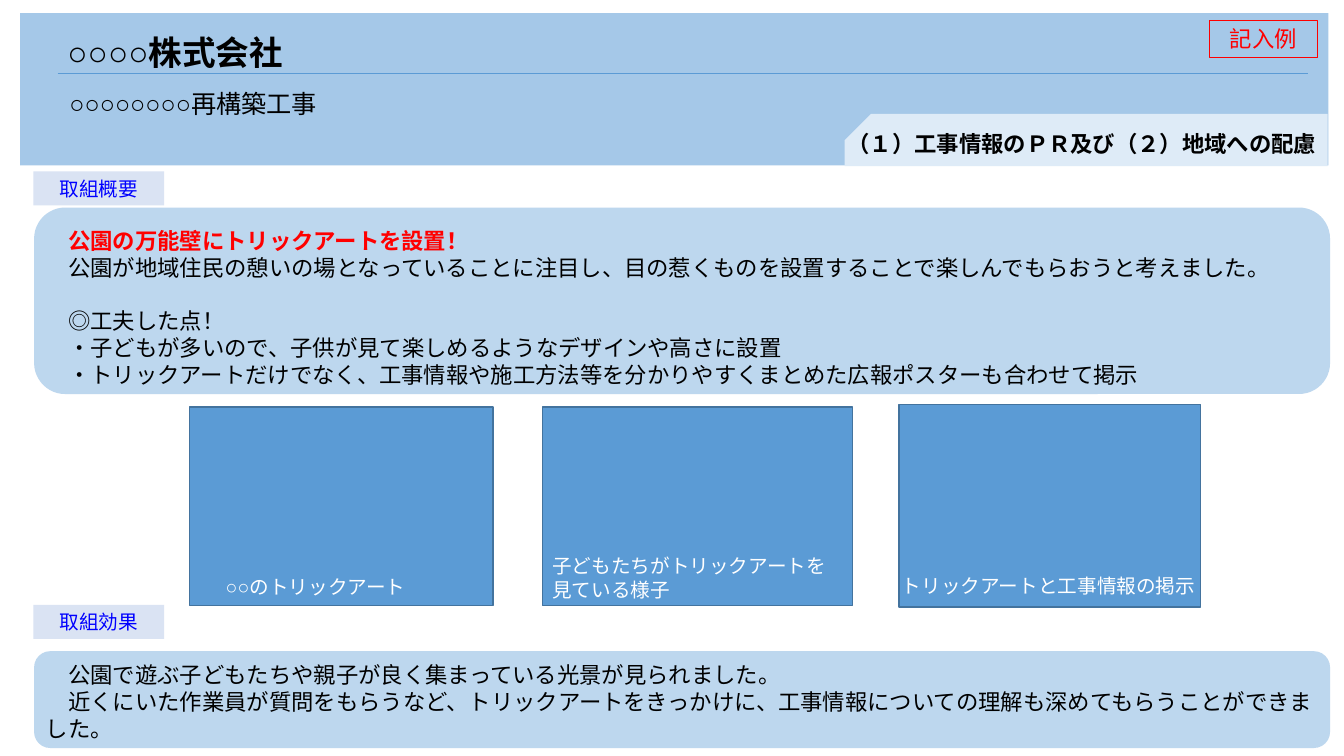
from dataclasses import dataclass
from typing import Optional

from lxml.etree import SubElement
from pptx import Presentation
from pptx.dml.color import RGBColor
from pptx.enum.shapes import MSO_CONNECTOR, MSO_SHAPE as SHAPE
from pptx.enum.text import MSO_ANCHOR, PP_ALIGN
from pptx.oxml.ns import qn
from pptx.util import Cm, Pt

BLACK = RGBColor(0x00, 0x00, 0x00)
WHITE = RGBColor(0xFF, 0xFF, 0xFF)
RED = RGBColor(0xFF, 0x00, 0x00)
LABEL_BLUE = RGBColor(0x00, 0x00, 0xFF)
HEADER = RGBColor(0x69, 0xA4, 0xD9)
TAB = RGBColor(0xDE, 0xEB, 0xF7)
LABEL = RGBColor(0xDA, 0xE3, 0xF3)
PANEL = RGBColor(0xBD, 0xD7, 0xEE)
PHOTO = RGBColor(0x5B, 0x9B, 0xD5)
PHOTO_EDGE = RGBColor(0x43, 0x73, 0x9E)


@dataclass
class Box:
    """Position and size in centimetres."""
    left: float
    top: float
    width: float
    height: float

    def lengths(self) -> tuple:
        return Cm(self.left), Cm(self.top), Cm(self.width), Cm(self.height)


@dataclass
class Style:
    size: float
    color: RGBColor = BLACK
    bold: bool = False
    font: str = "Arial"
    line_spacing: Optional[float] = None
    align: Optional[PP_ALIGN] = None


@dataclass
class Photo:
    frame: Box
    caption: str
    caption_box: Box


def style_run(r, style: Style) -> None:
    f = r.font
    f.name, f.size, f.bold = style.font, Pt(style.size), style.bold
    f.color.rgb = style.color
    SubElement(r._r.get_or_add_rPr(), qn("a:ea")).set("typeface", style.font)


def write(tf, text: str, style: Style) -> None:
    tf.word_wrap = True
    tf.text = text
    for p in tf.paragraphs:
        p.alignment = style.align
        p.line_spacing = style.line_spacing
        for r in p.runs:
            style_run(r, style)


def add_text(slide, box: Box, text: str, style: Style):
    tf = slide.shapes.add_textbox(*box.lengths()).text_frame
    write(tf, text, style)
    return tf


def add_block(slide, kind: SHAPE, box: Box, fill: Optional[RGBColor] = None,
              edge: Optional[RGBColor] = None, edge_width: float = 1):
    sp = slide.shapes.add_shape(kind, *box.lengths())
    sp.shadow.inherit = False
    if fill is None:
        sp.fill.background()
    else:
        sp.fill.solid()
        sp.fill.fore_color.rgb = fill
    if edge is None:
        sp.line.fill.background()
    else:
        sp.line.color.rgb = edge
        sp.line.width = Pt(edge_width)
    return sp


def add_label(sp, text: str, style: Style) -> None:
    write(sp.text_frame, text, style)
    sp.text_frame.vertical_anchor = MSO_ANCHOR.MIDDLE


def add_header(slide) -> None:
    band = add_block(slide, SHAPE.RECTANGLE, Box(0.51, 0.33, 32.97, 3.84), HEADER)
    color = band.fill._xPr.find(qn("a:solidFill"))[0]
    SubElement(color, qn("a:alpha")).set("val", "60000")

    tab = add_block(slide, SHAPE.SNIP_1_RECTANGLE, Box(21.29, 2.87, 12.17, 1.32), TAB)
    tab.adjustments[0] = 0.5
    tab._element.spPr.find(qn("a:xfrm")).set("flipH", "1")

    rule = slide.shapes.add_connector(
        MSO_CONNECTOR.STRAIGHT, Cm(1.45), Cm(1.85), Cm(32.97), Cm(1.85))
    rule.line.color.rgb = PHOTO
    rule.line.width = Pt(0.5)
    SubElement(rule._element.spPr, qn("a:effectLst"))

    add_text(slide, Box(1.45, 0.18, 24.03, 1.8), "○○○○株式会社",
             Style(24, bold=True, line_spacing=1.5))
    add_text(slide, Box(1.5, 1.73, 24.03, 1.42), "○○○○○○○○再構築工事",
             Style(18, line_spacing=1.5))
    add_text(slide, Box(21.11, 3.15, 14.12, 0.94),
             "（１）工事情報のＰＲ及び（２）地域への配慮", Style(16, bold=True))

    stamp = add_block(slide, SHAPE.RECTANGLE, Box(30.48, 0.51, 2.72, 0.94),
                      edge=RED, edge_width=0.75)
    add_label(stamp, "記入例", Style(16, RED, font="Calibri", align=PP_ALIGN.CENTER))


def add_section(slide, label: str, label_top: float, panel: Box,
                text_box: Box, text: str):
    tag = add_block(slide, SHAPE.RECTANGLE, Box(0.84, label_top, 3.3, 0.86), LABEL)
    add_label(tag, label, Style(14, LABEL_BLUE, align=PP_ALIGN.CENTER))
    add_block(slide, SHAPE.ROUNDED_RECTANGLE, panel, PANEL)
    return add_text(slide, text_box, text, Style(16))


OVERVIEW = "\n".join([
    "　公園の万能壁にトリックアートを設置！",
    "　公園が地域住民の憩いの場となっていることに注目し、目の惹くものを設置することで楽しんでもらおうと考えました。",
    "　◎工夫した点！",
    "　・子どもが多いので、子供が見て楽しめるようなデザインや高さに設置",
    "　・トリックアートだけでなく、工事情報や施工方法等を分かりやすくまとめた広報ポスターも合わせて掲示",
])
EFFECT = "\n".join([
    "　公園で遊ぶ子どもたちや親子が良く集まっている光景が見られました。",
    "　近くにいた作業員が質問をもらうなど、トリックアートをきっかけに、工事情報についての理解も深めてもらうことができました。",
])
PHOTOS = [
    Photo(Box(4.78, 10.26, 7.65, 5), "○○のトリックアート", Box(5.44, 14.35, 6.1, 0.86)),
    Photo(Box(13.67, 10.26, 7.82, 5), "子どもたちがトリックアートを見ている様子",
          Box(13.67, 13.84, 7.45, 1.45)),
    Photo(Box(22.66, 10.19, 7.6, 5.11), "トリックアートと工事情報の掲示",
          Box(22.48, 14.33, 8.43, 0.86)),
]


def main() -> None:
    prs = Presentation()
    prs.slide_width, prs.slide_height = Cm(33.87), Cm(19.05)
    slide = prs.slides.add_slide(prs.slide_layouts[6])

    add_header(slide)

    # Overview: red headline, and a gap of one line before the key points
    tf = add_section(slide, "取組概要", 4.32, Box(0.86, 5.23, 32.66, 4.7),
                     Box(0.91, 5.59, 32.66, 4.37), OVERVIEW)
    headline = tf.paragraphs[0].runs[0].font
    headline.bold, headline.color.rgb = True, RED
    tf.paragraphs[2].space_before = Pt(19)

    # Effect
    add_section(slide, "取組効果", 15.24, Box(0.86, 16.41, 32.66, 2.44),
                Box(0.91, 16.54, 32.59, 2.31), EFFECT)

    # Photo frames with captions
    for photo in PHOTOS:
        add_block(slide, SHAPE.RECTANGLE, photo.frame, PHOTO, PHOTO_EDGE)
        add_text(slide, photo.caption_box, photo.caption, Style(14, WHITE))

    prs.save("out.pptx")


if __name__ == "__main__":
    main()
